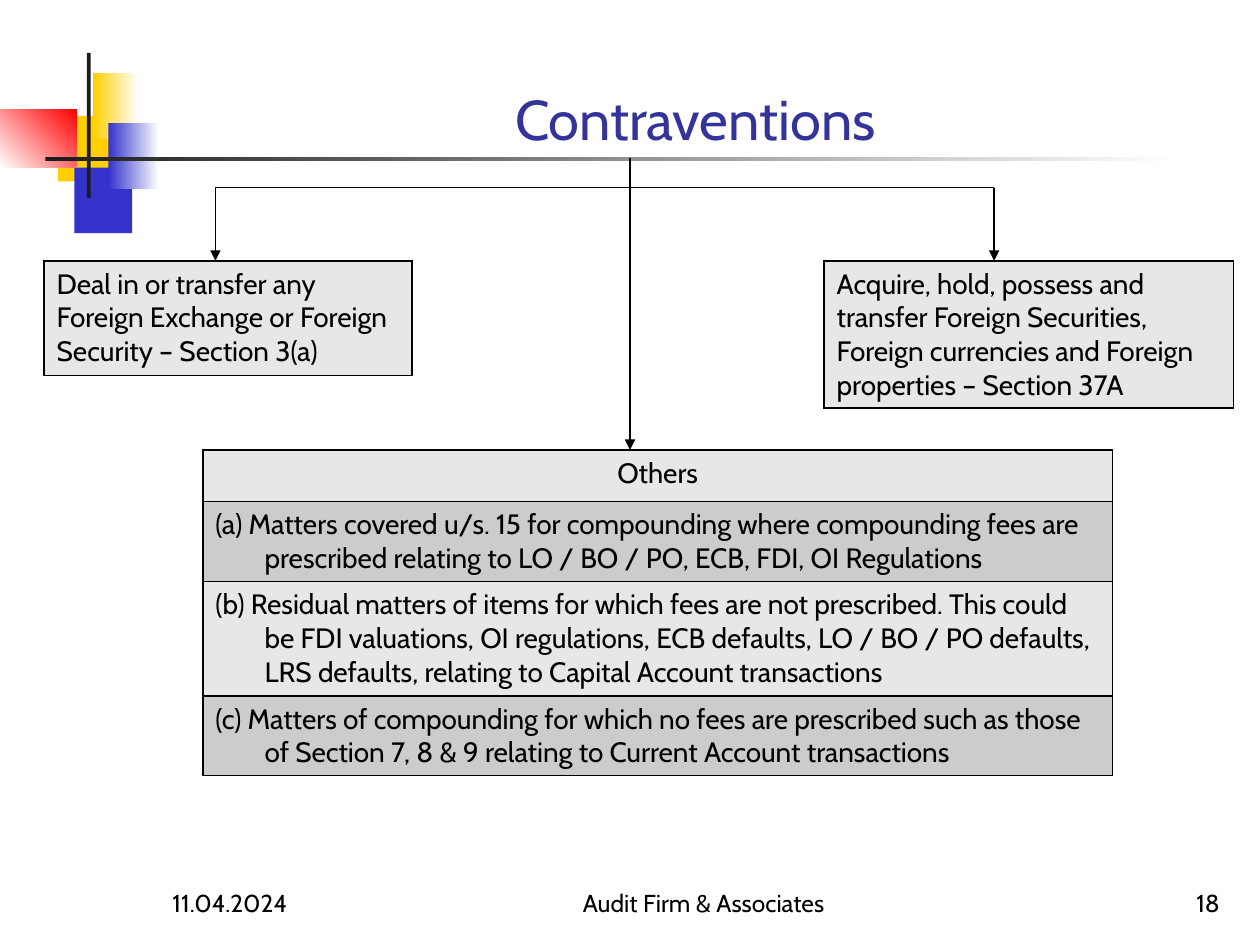
"""Build the Contraventions slide: a title, three linked tables and a footer."""
from lxml.etree import SubElement
from pptx import Presentation
from pptx.dml.color import RGBColor
from pptx.enum.shapes import MSO_CONNECTOR, MSO_SHAPE
from pptx.enum.text import MSO_ANCHOR, PP_ALIGN
from pptx.oxml.ns import qn
from pptx.util import Inches, Pt

COLORS = {
    "yellow": "FFCF01", "blue": "3333CC", "red": "FF0000", "white": "FFFFFF",
    "ink": "1C1C1C", "black": "000000", "title": "333399",
    "light": "E7E7E7", "mid": "CCCCCC",
}
FONT = "Cabin"


def rgb(name):
    return RGBColor.from_string(COLORS[name])


def write(frame, text, size, color, align):
    frame.word_wrap = True
    paragraph = frame.paragraphs[0]
    paragraph.text = text
    paragraph.alignment = align
    paragraph.font.name = FONT
    paragraph.font.size = Pt(size)
    paragraph.font.color.rgb = rgb(color)
    return paragraph


deck = Presentation()
deck.slide_width, deck.slide_height = Inches(10), Inches(7.5)
slide = deck.slides.add_slide(deck.slide_layouts[6])
shapes = slide.shapes

ornaments = [
    ((0.46, 0.92, 0.48, 0.52), ["yellow"], 0),
    ((0.59, 1.33, 0.46, 0.52), ["blue"], 0),
    ((0.74, 0.58, 0.36, 0.52), ["yellow", "white"], 0),
    ((0.86, 0.98, 0.4, 0.52), ["blue", "white"], 0),
    ((0, 0.87, 0.61, 0.46), ["white", "red"], 45),
    ((0.69, 0.42, 0.03, 1.15), ["ink"], 0),
    ((0.36, 1.25, 9, 0.03), ["ink", "white"], 0),
]
for box, tones, angle in ornaments:
    ornament = shapes.add_shape(MSO_SHAPE.RECTANGLE, *map(Inches, box))
    ornament.shadow.inherit = False
    ornament.line.fill.background()
    if len(tones) == 1:
        ornament.fill.solid()
        ornament.fill.fore_color.rgb = rgb(tones[0])
    else:
        ornament.fill.gradient()
        ornament.fill.gradient_angle = angle
        for stop, tone, position in zip(ornament.fill.gradient_stops, tones, (0, 1)):
            stop.color.rgb = rgb(tone)
            stop.position = position

captions = [
    ((1.26, 0.23, 8.52, 1.02), "Contraventions", 32, "title", PP_ALIGN.CENTER),
    ((1.27, 6.83, 2.08, 0.5), "11.04.2024", 14, "black", PP_ALIGN.LEFT),
    ((4, 6.83, 3.17, 0.5), "Audit Firm & Associates", 14, "black", PP_ALIGN.CENTER),
    ((7.7, 6.83, 2.08, 0.5), "18", 14, "black", PP_ALIGN.RIGHT),
]
for box, text, size, color, align in captions:
    caption = shapes.add_textbox(*map(Inches, box)).text_frame
    caption.vertical_anchor = MSO_ANCHOR.BOTTOM
    write(caption, text, size, color, align)

tables = [
    (0.35, 2.07, 2.92, [
        (0.91, "Deal in or transfer any Foreign Exchange or Foreign Security – Section 3(a)"),
    ]),
    (6.54, 2.07, 3.25, [
        (1.17, "Acquire, hold, possess and transfer Foreign Securities, "
               "Foreign currencies and Foreign properties – Section 37A"),
    ]),
    (1.61, 3.57, 7.22, [
        (0.41, "Others"),
        (0.63, "(a) Matters covered u/s. 15 for compounding where compounding fees are "
               "prescribed relating to LO / BO / PO, ECB, FDI, OI Regulations"),
        (0.91, "(b) Residual matters of items for which fees are not prescribed. This could "
               "be FDI valuations, OI regulations, ECB defaults, LO / BO / PO defaults, "
               "LRS defaults, relating to Capital Account transactions"),
        (0.63, "(c) Matters of compounding for which no fees are prescribed such as those "
               "of Section 7, 8 & 9 relating to Current Account transactions"),
    ]),
]
for left, top, width, rows in tables:
    total = sum(height for height, _ in rows)
    table = shapes.add_table(
        len(rows), 1, Inches(left), Inches(top), Inches(width), Inches(total)
    ).table
    table.first_row = table.horz_banding = False
    for index, (height, text) in enumerate(rows):
        table.rows[index].height = Inches(height)
        cell = table.cell(index, 0)
        align = PP_ALIGN.CENTER if text == "Others" else PP_ALIGN.LEFT
        paragraph = write(cell.text_frame, text, 16, "black", align)
        if index > 0:
            indents = paragraph._p.get_or_add_pPr()
            indents.set("marL", str(Inches(0.39)))
            indents.set("indent", str(Inches(-0.39)))
        properties = cell._tc.get_or_add_tcPr()
        for side in ("a:lnL", "a:lnR", "a:lnT", "a:lnB"):
            border = SubElement(properties, qn(side), w=str(Pt(1)))
            paint = SubElement(border, qn("a:solidFill"))
            SubElement(paint, qn("a:srgbClr"), val=COLORS["black"])
        cell.fill.solid()
        cell.fill.fore_color.rgb = rgb("mid" if index % 2 else "light")

branch_y = 1.49
branches = [
    (1.71, branch_y, 7.89, branch_y, False),
    (1.71, branch_y, 1.71, 2.07, True),
    (7.89, branch_y, 7.89, 2.07, True),
    (5, branch_y, 5, 3.57, True),
    (5, branch_y, 5, 1.25, False),
]
for *ends, has_arrow in branches:
    branch = shapes.add_connector(MSO_CONNECTOR.STRAIGHT, *map(Inches, ends))
    branch.line.color.rgb = rgb("black")
    branch.line.width = Pt(0.75)
    if has_arrow:
        SubElement(branch.line._get_or_add_ln(), qn("a:tailEnd"), type="triangle")
    SubElement(branch._element.spPr, qn("a:effectLst"))

deck.save("out.pptx")
